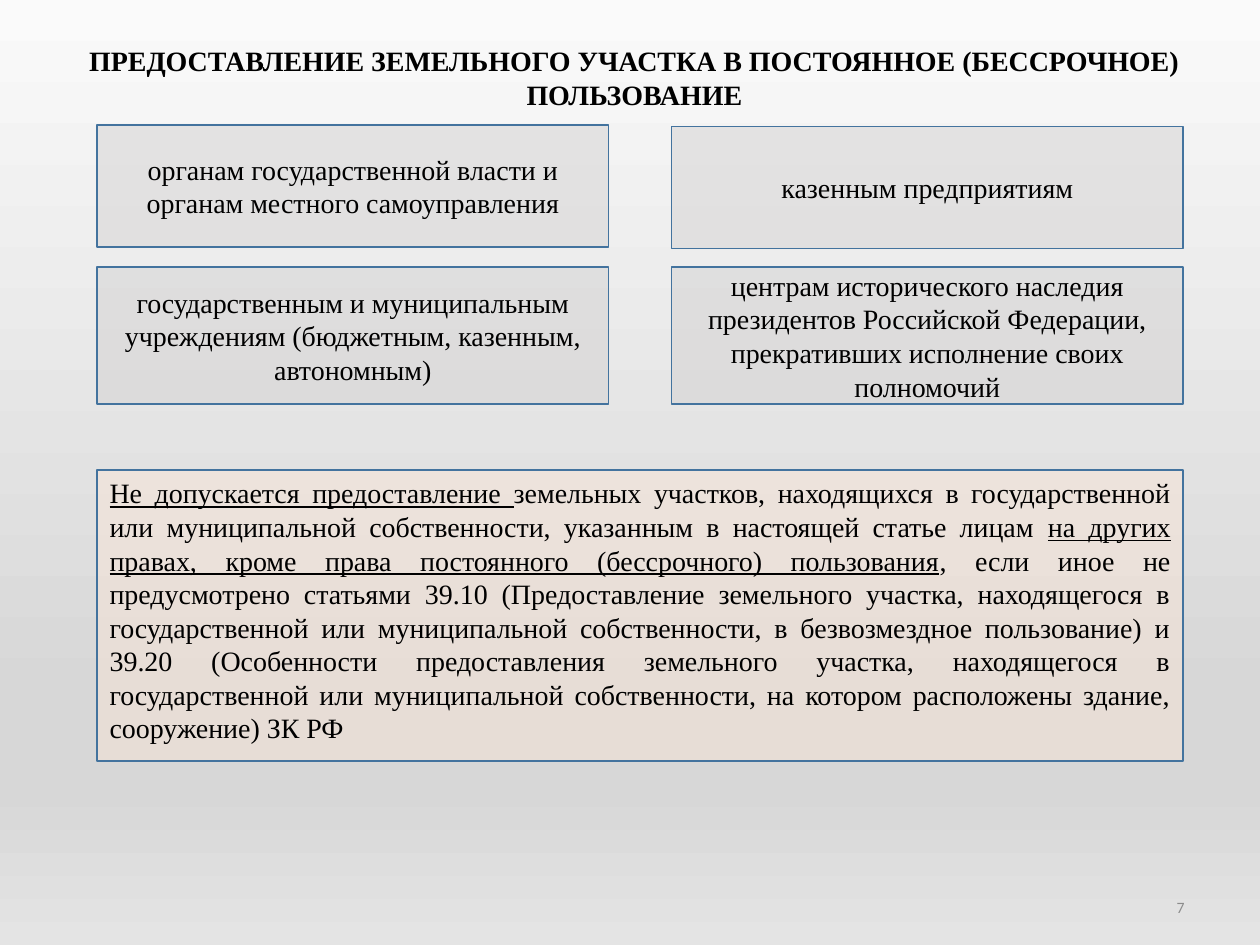
from lxml import etree
from pptx import Presentation
from pptx.dml.color import RGBColor
from pptx.enum import shapes, text
from pptx.oxml.ns import qn
from pptx.util import Cm, Pt

# Content
TITLE = "ПРЕДОСТАВЛЕНИЕ ЗЕМЕЛЬНОГО УЧАСТКА В ПОСТОЯННОЕ (БЕССРОЧНОЕ) ПОЛЬЗОВАНИЕ"
BODIES = [
    ["органам государственной власти и органам местного самоуправления",
     "казенным предприятиям"],
    ["государственным и муниципальным учреждениям (бюджетным, казенным, автономным)",
     "центрам исторического наследия президентов Российской Федерации, "
     "прекративших исполнение своих полномочий"],
]
# Pieces of the note: wording, underlined
NOTE = [
    ("Не допускается предоставление ", True),
    ("земельных участков, находящихся в государственной или муниципальной "
     "собственности, указанным в настоящей статье лицам ", False),
    ("на других правах, кроме права постоянного (бессрочного) пользования", True),
    (", если иное не предусмотрено статьями 39.10 (Предоставление земельного участка, "
     "находящегося в государственной или муниципальной собственности, в безвозмездное "
     "пользование) и 39.20 (Особенности предоставления земельного участка, находящегося "
     "в государственной или муниципальной собственности, на котором расположены здание, "
     "сооружение) ЗК РФ", False),
]
PAGE = "7"

# Look
HUE = {"text": "000000", "page": "8C8C8C", "edge": "43739E",
       "box": "D0CECE", "note": "FBE5D6"}
SHADE = [(0, "FAFAFA"), (74, "D7D7D7"), (83, "D7D7D7"), (100, "E4E4E4")]
SERIF, SANS = "Times New Roman", "Calibri"
LEFT, WIDE, BOX = 1.96, 21.89, 10.31
ROWS = [(2.52, 2.46), (5.38, 2.77)]  # top, height
DROP = 0.03  # the upper right box sits slightly lower
ALIGN, ANCHOR = text.PP_ALIGN, text.MSO_ANCHOR

deck = Presentation()
deck.slide_width, deck.slide_height = Cm(25.4), Cm(19.05)
slide = deck.slides.add_slide(deck.slide_layouts[6])


def rgb(name):
    return RGBColor.from_string(HUE[name])


def write(shape, parts, align, anchor, size=16, face=SERIF, hue="text", bold=False):
    frame = shape.text_frame
    frame.word_wrap = True
    frame.vertical_anchor = anchor
    para = frame.paragraphs[0]
    para.alignment = align
    for words, under in parts:
        run = para.add_run()
        run.text = words
        font = run.font
        font.size, font.name, font.bold = Pt(size), face, bold
        font.underline = under
        font.color.rgb = rgb(hue)
    return para


def label(place, words, align, anchor, **look):
    box = slide.shapes.add_textbox(*map(Cm, place))
    write(box, [(words, False)], align, anchor, **look)


def panel(place, fill, parts, align, anchor):
    box = slide.shapes.add_shape(shapes.MSO_SHAPE.RECTANGLE, *map(Cm, place))
    box.shadow.inherit = False
    box.fill.solid()
    box.fill.fore_color.rgb = rgb(fill)
    tint = next(box.fill._xPr.iter(qn("a:srgbClr")))
    etree.SubElement(tint, qn("a:alpha"), val="45000")
    box.line.color.rgb = rgb("edge")
    box.line.width = Pt(1)
    para = write(box, parts, align, anchor)
    para.space_after = Pt(6)


# Background gradient, running downwards
back = slide.background.fill
back.gradient()
back.gradient_angle = 270
stops = next(slide.element.iter(qn("a:gsLst")))
for stop in list(stops):
    stops.remove(stop)
for spot, tone in SHADE:
    stop = etree.SubElement(stops, qn("a:gs"), pos=str(spot * 1000))
    etree.SubElement(stop, qn("a:srgbClr"), val=tone)

# Page number and title
label((18.21, 17.78, 5.92, 1.02), PAGE, ALIGN.RIGHT, ANCHOR.MIDDLE,
      size=9, face=SANS, hue="page")
label((0.71, 0.76, 24.16, 1.63), TITLE, ALIGN.CENTER, ANCHOR.TOP, bold=True)

# Grid of those who may receive land
for r, (top, high) in enumerate(ROWS):
    for c, words in enumerate(BODIES[r]):
        x = LEFT + c * (WIDE - BOX)
        y = top + (DROP if (r, c) == (0, 1) else 0)
        panel((x, y, BOX, high), "box", [(words, False)], ALIGN.CENTER, ANCHOR.MIDDLE)

# Note on the restriction
panel((LEFT, 9.47, WIDE, 5.87), "note", NOTE, ALIGN.JUSTIFY, ANCHOR.TOP)

deck.save("out.pptx")
